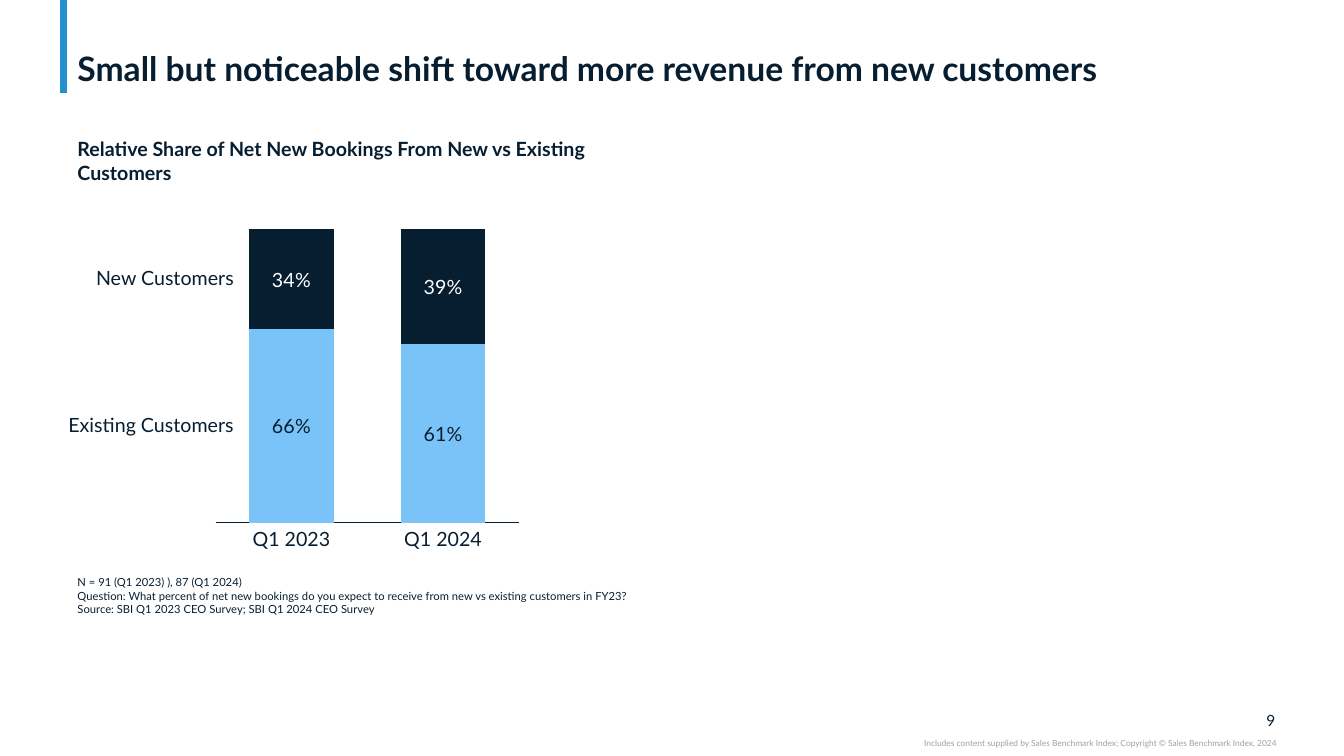
"""Build the slide on the revenue shift toward new customers."""
from lxml import etree
from pptx import Presentation
from pptx.chart.data import CategoryChartData
from pptx.dml.color import RGBColor
from pptx.enum.chart import XL_CHART_TYPE, XL_LABEL_POSITION, XL_TICK_LABEL_POSITION, XL_TICK_MARK
from pptx.enum.shapes import MSO_CONNECTOR
from pptx.enum.text import MSO_ANCHOR, PP_ALIGN
from pptx.oxml import parse_xml
from pptx.oxml.ns import nsdecls, qn
from pptx.util import Inches, Pt

FONT = "Lato"
NAVY = RGBColor(0x07, 0x1E, 0x31)
SKY = RGBColor(0x7A, 0xC3, 0xF8)
BLUE = RGBColor(0x23, 0x91, 0xCF)
GRAY = RGBColor(0xA0, 0xA0, 0xA0)
WHITE = RGBColor(0xFF, 0xFF, 0xFF)

TITLE = "Small but noticeable shift toward more revenue from new customers"
SUBTITLE = "Relative Share of Net New Bookings From New vs Existing Customers"
NOTES = [
    "N = 91 (Q1 2023) ), 87 (Q1 2024)",
    "Question: What percent of net new bookings do you expect to receive from new vs existing customers in FY23?",
    "Source: SBI Q1 2023 CEO Survey; SBI Q1 2024 CEO Survey",
]
PAGE = "9"
COPYRIGHT = "Includes content supplied by Sales Benchmark Index; Copyright © Sales Benchmark Index, 2024"
QUARTERS = ["Q1 2023", "Q1 2024"]
SERIES = [
    ("Existing Customers", (66, 61), SKY, NAVY),
    ("New Customers", (34, 39), NAVY, WHITE),
]
CHART_BOX = (2.05, 1.94, 3.19, 3.58)
PLOT = {"x": 0.028, "y": 0.094, "w": 0.943, "h": 0.813}
LABEL_H = 0.21


def add_text(s, box, lines, size, color=NAVY, bold=False, align=PP_ALIGN.LEFT,
             anchor=MSO_ANCHOR.TOP, inset=(0, 0), wrap=True, spacing=1.0):
    tf = s.shapes.add_textbox(*map(Inches, box)).text_frame
    tf.word_wrap = wrap
    tf.vertical_anchor = anchor
    tf.margin_left = tf.margin_right = Inches(inset[0])
    tf.margin_top = tf.margin_bottom = Inches(inset[1])
    for i, line in enumerate(lines):
        p = tf.add_paragraph() if i else tf.paragraphs[0]
        p.text = line
        p.alignment = align
        p.line_spacing = spacing
        p.font.name, p.font.size, p.font.bold = FONT, Pt(size), bold
        p.font.color.rgb = color


def add_bookings_chart(s):
    data = CategoryChartData(number_format='0"%"')
    data.categories = QUARTERS
    for name, values, _, _ in SERIES:
        data.add_series(name, values)
    chart = s.shapes.add_chart(
        XL_CHART_TYPE.COLUMN_STACKED, *map(Inches, CHART_BOX), data).chart
    chart.has_legend = chart.has_title = False
    chart.font.name, chart.font.size = FONT, Pt(14)
    chart.font.color.rgb = NAVY

    axis = chart.value_axis
    axis.minimum_scale, axis.maximum_scale = 0, 100
    axis.has_major_gridlines = axis.visible = False
    axis = chart.category_axis
    axis.tick_label_position = XL_TICK_LABEL_POSITION.NONE
    axis.major_tick_mark = axis.minor_tick_mark = XL_TICK_MARK.NONE
    axis.format.line.color.rgb = NAVY
    axis.format.line.width = Pt(0.75)

    plot = chart.plots[0]
    plot.gap_width, plot.overlap = 80, 100
    plot.vary_by_categories = False
    for series, (_, _, fill, ink) in zip(plot.series, SERIES):
        series.format.fill.solid()
        series.format.fill.fore_color.rgb = fill
        labels = series.data_labels
        labels.show_value = True
        labels.position = XL_LABEL_POSITION.CENTER
        labels.number_format, labels.number_format_is_linked = '0"%"', False
        labels.font.name, labels.font.size = FONT, Pt(14)
        labels.font.color.rgb = ink

    area = chart._chartSpace.find(".//" + qn("c:plotArea"))
    for old in area.findall(qn("c:layout")):
        area.remove(old)
    sizes = "".join(f'<c:{k} val="{v}"/>' for k, v in PLOT.items())
    area.insert(0, parse_xml(
        f'<c:layout {nsdecls("c")}><c:manualLayout><c:layoutTarget val="inner"/>'
        f'<c:xMode val="edge"/><c:yMode val="edge"/>{sizes}</c:manualLayout></c:layout>'))


def add_chart_labels(s):
    left, top, width, height = CHART_BOX
    plot_left, plot_width = left + PLOT["x"] * width, PLOT["w"] * width
    plot_height = PLOT["h"] * height
    base = top + PLOT["y"] * height + plot_height
    step = plot_width / len(QUARTERS)
    for i, quarter in enumerate(QUARTERS):
        add_text(s, (plot_left + i * step, 5.25, step, LABEL_H), [quarter], 14,
                 align=PP_ALIGN.CENTER, wrap=False, spacing=0.9)
    total = 0
    for name, values, _, _ in SERIES:
        middle = base - (total + values[0] / 2) / 100 * plot_height
        add_text(s, (0.62, middle - LABEL_H / 2, 1.7, LABEL_H), [name], 14,
                 align=PP_ALIGN.RIGHT, anchor=MSO_ANCHOR.MIDDLE, wrap=False, spacing=0.9)
        total += values[0]


def main():
    prs = Presentation()
    prs.slide_width, prs.slide_height = Inches(13.33), Inches(7.5)
    s = prs.slides.add_slide(prs.slide_layouts[6])

    accent = s.shapes.add_connector(
        MSO_CONNECTOR.STRAIGHT, Inches(0.63), 0, Inches(0.63), Inches(0.92))
    accent.line.color.rgb, accent.line.width = BLUE, Pt(5)
    etree.SubElement(accent._element.spPr, qn("a:effectLst"))

    add_text(s, (12.32, 7.05, 0.33, 0.19), [PAGE], 11,
             align=PP_ALIGN.RIGHT, anchor=MSO_ANCHOR.MIDDLE)
    add_text(s, (7.5, 7.32, 5.16, 0.1), [COPYRIGHT], 6, GRAY, align=PP_ALIGN.RIGHT)
    add_text(s, (0.67, 0.04, 11.99, 0.84), [TITLE], 24, bold=True,
             anchor=MSO_ANCHOR.BOTTOM, inset=(0.1, 0), spacing=0.9)
    add_bookings_chart(s)
    add_chart_labels(s)
    add_text(s, (0.67, 5.66, 6.37, 0.5), NOTES, 8, inset=(0.1, 0.05))
    add_text(s, (0.67, 1.31, 5.44, 0.57), [SUBTITLE], 14, bold=True, inset=(0.1, 0.05))
    prs.save("out.pptx")


if __name__ == "__main__":
    main()
